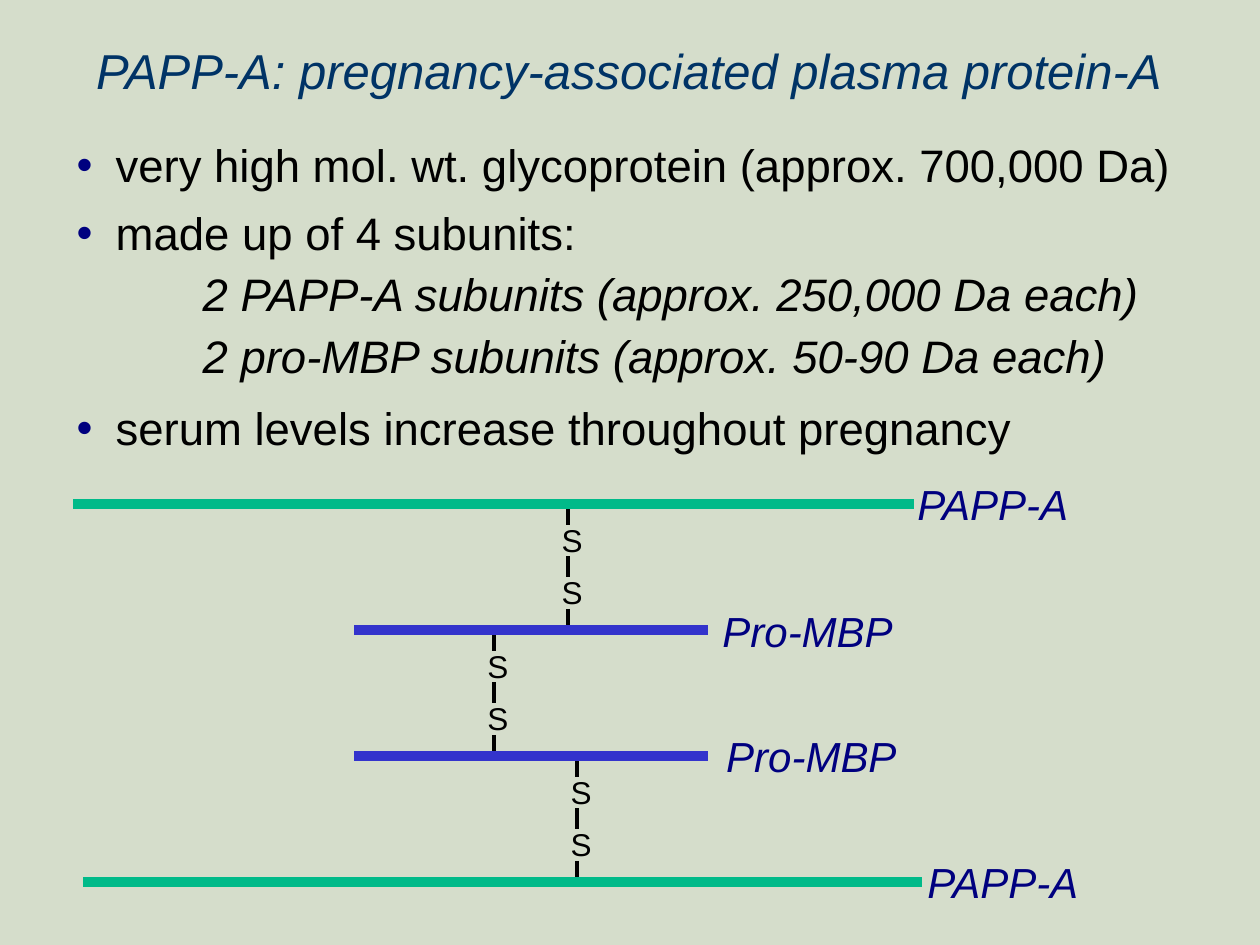
from lxml.etree import SubElement as Sub
from pptx import Presentation
from pptx.dml.color import RGBColor as RGB
from pptx.enum.shapes import MSO_CONNECTOR as Conn
from pptx.enum.text import MSO_ANCHOR as Anchor, PP_ALIGN as Align
from pptx.oxml.ns import qn
from pptx.util import Inches, Pt

SAGE = RGB(0xD5, 0xDD, 0xCB)
BLACK = RGB(0, 0, 0)
NAVY = RGB(0, 0, 0x7F)
TEAL = RGB(0, 0x33, 0x66)
GREEN = RGB(0, 0xBA, 0x89)
BLUE = RGB(0x33, 0x33, 0xCC)

# Wording, is a subunit, points before, points after
POINTS = [
    ("very high mol. wt. glycoprotein (approx. 700,000 Da)", False, 0, 7.8),
    ("made up of 4 subunits:", False, 0, 3.8),
    ("2 PAPP-A subunits (approx. 250,000 Da each)", True, 0, 3.8),
    ("2 pro-MBP subunits (approx. 50-90 Da each)", True, 0, 3.8),
    ("serum levels increase throughout pregnancy", False, 6.6, 3.8),
]
# Name, colour, chain left, chain width, label left, label top (from the chain)
CHAINS = [
    ("PAPP-A", GREEN, 0, 6.67, 6.42, -0.25),
    ("Pro-MBP", BLUE, 2.23, 2.81, 4.95, -0.24),
    ("Pro-MBP", BLUE, 2.23, 2.81, 4.98, -0.25),
    ("PAPP-A", GREEN, 0.08, 6.66, 6.5, -0.25),
]
BONDS = [3.93, 3.34, 4.0]


def add_run(para, text, size, color, italic=False):
    run = para.add_run()
    run.text = text
    font = run.font
    font.name, font.size, font.italic = "Arial", Pt(size), italic
    font.color.rgb = color


def add_box(shapes, left, top, width, height, wrap=True):
    box = shapes.add_textbox(Inches(left), Inches(top), Inches(width), Inches(height))
    box.text_frame.word_wrap = wrap
    return box.text_frame


def add_line(shapes, start, end, color, width):
    line = shapes.add_connector(Conn.STRAIGHT, *map(Inches, start + end))
    line.line.color.rgb = color
    line.line.width = Pt(width)
    Sub(line._element.spPr, qn("a:effectLst"))


def set_list(para, sub):
    """Set the indent, the bullet of a main point and the tab stops."""
    props = para._p.get_or_add_pPr()
    props.set("marL", str(Inches(0.5 if sub else 0.31)))
    props.set("indent", str(0 if sub else -Inches(0.31)))
    if sub:
        para.level = 1
        Sub(props, qn("a:buNone"))
    else:
        Sub(Sub(props, qn("a:buClr")), qn("a:srgbClr"), val=str(NAVY))
        Sub(props, qn("a:buFont"), typeface="Arial")
        Sub(props, qn("a:buChar"), char="•")
    tabs = Sub(props, qn("a:tabLst"))
    for stop in (1, 5.31, 7.86):
        Sub(tabs, qn("a:tab"), pos=str(Inches(stop)), algn="l")


def add_title(slide, left, top, width, height):
    para = add_box(slide.shapes, left, top, width, height, False).paragraphs[0]
    para.alignment = Align.CENTER
    add_run(para, "PAPP-A: pregnancy-associated plasma protein-A", 28, TEAL, True)


def add_points(slide, left, top, width, height):
    frame = add_box(slide.shapes, left, top, width, height)
    frame.vertical_anchor = Anchor.MIDDLE
    for i, (text, sub, before, after) in enumerate(POINTS):
        para = frame.add_paragraph() if i else frame.paragraphs[0]
        set_list(para, sub)
        if before:
            para.space_before = Pt(before)
        para.space_after = Pt(after)
        add_run(para, "\t" + text if sub else text, 26, BLACK, sub)


def add_bond(slide, x, top, height):
    """Link two chains with a dashed S-S bridge, drawn as one group."""
    shapes = slide.shapes.add_group_shape().shapes
    step = height * 5 / 12
    for i in range(3):
        y = top + i * step
        add_line(shapes, (x, y), (x, y + height / 6), BLACK, 2.25)
    for i in range(2):
        frame = add_box(shapes, x - 0.15, top + height / 12 + i * step, 0.39, 0.4)
        add_run(frame.paragraphs[0], "S", 18, BLACK)


def add_diagram(slide, left, top, height):
    gap = height / (len(CHAINS) - 1)
    for i, x in enumerate(BONDS):
        add_bond(slide, left + x, top + i * gap, gap)
    for i, (name, color, x, width, label, shift) in enumerate(CHAINS):
        y = top + i * gap
        add_line(slide.shapes, (left + x, y), (left + x + width, y), color, 6)
        frame = add_box(slide.shapes, left + label, y + shift, 1.76, 0.5)
        para = frame.paragraphs[0]
        para.alignment = Align.CENTER
        add_run(para, name, 24, NAVY, True)


def main():
    deck = Presentation()
    deck.slide_width, deck.slide_height = Inches(10), Inches(7.5)
    slide = deck.slides.add_slide(deck.slide_layouts[6])
    fill = slide.background.fill
    fill.solid()
    fill.fore_color.rgb = SAGE
    add_points(slide, 0.51, 1.03, 9.16, 2.64)
    add_diagram(slide, 0.58, 4, 3)
    add_title(slide, 0.61, 0.27, 8.76, 0.57)
    deck.save("out.pptx")


if __name__ == "__main__":
    main()
